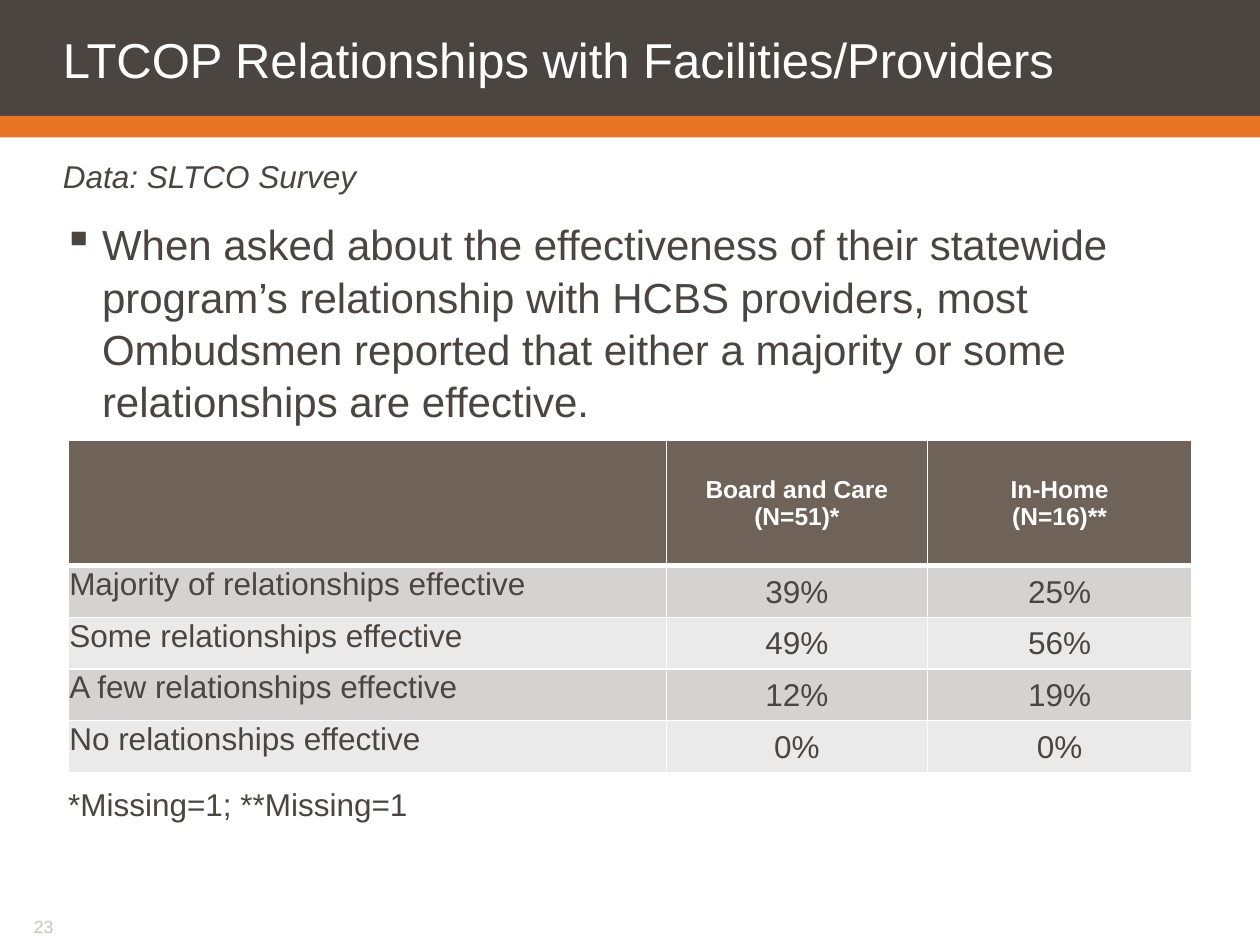
from lxml import etree
from pptx import Presentation
from pptx import util as u
from pptx.dml.color import RGBColor
from pptx.enum import shapes, text
from pptx.oxml.ns import qn

COLORS = {
    "dark": "4A4541", "orange": "E87424", "white": "FFFFFF", "number": "C8C2BF",
    "header": "6E6259", "band": "D5D3D1", "light": "EBEAEA",
}
FONT = "Arial"
HEADER = ["", "Board and Care\n(N=51)*", "In-Home\n(N=16)**"]
ROWS = [
    ["Majority of relationships effective", "39%", "25%"],
    ["Some relationships effective", "49%", "56%"],
    ["A few relationships effective", "12%", "19%"],
    ["No relationships effective", "0%", "0%"],
]
COLUMN_WIDTHS = [4.75, 2.07, 2.1]
HEADER_HEIGHT, ROW_HEIGHT = 1, 0.41


def color(name):
    return RGBColor.from_string(COLORS[name])


def style(para, size, tint, bold=False, italic=False):
    font = para.font
    font.name, font.size = FONT, u.Pt(size)
    font.bold, font.italic = bold, italic
    font.color.rgb = color(tint)


def set_margins(item, margins):
    sides = ("left", "top", "right", "bottom")
    for side, value in zip(sides, margins):
        setattr(item, f"margin_{side}", u.Inches(value))


def add_band(page, top, height, tint):
    band = page.shapes.add_shape(shapes.MSO_SHAPE.RECTANGLE, 0, u.Inches(top),
                                 u.Inches(10), u.Inches(height))
    band.shadow.inherit = False
    band.fill.solid()
    band.fill.fore_color.rgb = color(tint)
    band.line.fill.background()


def add_text(page, words, place, size, tint="dark", margins=(0, 0.05, 0, 0.05),
             italic=False, wrap=True):
    box = page.shapes.add_textbox(*map(u.Inches, place))
    frame = box.text_frame
    frame.word_wrap = wrap
    set_margins(frame, margins)
    frame.text = words
    para = frame.paragraphs[0]
    style(para, size, tint, italic=italic)
    return frame


def add_bullet(page, words, place):
    para = add_text(page, words, place, 24).paragraphs[0]
    para.line_spacing = 1.04
    props = para._p.get_or_add_pPr()
    indent = u.Inches(0.31)
    props.set("marL", str(indent))
    props.set("indent", str(-indent))
    # The bullet goes before the default run properties
    bullet = etree.Element(qn("a:buChar"), char="▪")
    props.find(qn("a:defRPr")).addprevious(bullet)


def set_borders(cell, bottom):
    props = cell._tc.get_or_add_tcPr()
    widths = {"lnL": 1, "lnR": 1, "lnT": 1, "lnB": bottom}
    for position, (tag, width) in enumerate(widths.items()):
        line = etree.Element(qn(f"a:{tag}"), w=str(u.Pt(width)))
        fill = etree.SubElement(line, qn("a:solidFill"))
        etree.SubElement(fill, qn("a:srgbClr"), val=COLORS["white"])
        props.insert(position, line)


def fill_cell(cell, words, row, column):
    is_header = row == 0
    cell.fill.solid()
    tint = "header" if is_header else "band" if row % 2 else "light"
    cell.fill.fore_color.rgb = color(tint)
    set_borders(cell, bottom=3 if is_header else 1)
    set_margins(cell, (0.01, 0.01, 0.01, 0))
    if is_header or column > 0:
        cell.vertical_anchor = text.MSO_ANCHOR.MIDDLE
    cell.text_frame.text = words
    for para in cell.text_frame.paragraphs:
        style(para, 14 if is_header else 18,
              "white" if is_header else "dark", bold=is_header)
        if column > 0:
            para.alignment = text.PP_ALIGN.CENTER


def add_results(page, left, top):
    data = [HEADER] + ROWS
    height = HEADER_HEIGHT + ROW_HEIGHT * len(ROWS)
    frame = page.shapes.add_table(len(data), len(HEADER), u.Inches(left), u.Inches(top),
                                  u.Inches(sum(COLUMN_WIDTHS)), u.Inches(height))
    table = frame.table
    for column, width in zip(table.columns, COLUMN_WIDTHS):
        column.width = u.Inches(width)
    for row, values in enumerate(data):
        table.rows[row].height = u.Inches(ROW_HEIGHT if row else HEADER_HEIGHT)
        for column, words in enumerate(values):
            fill_cell(table.cell(row, column), words, row, column)


def main():
    deck = Presentation()
    deck.slide_width, deck.slide_height = u.Inches(10), u.Inches(7.5)
    page = deck.slides.add_slide(deck.slide_layouts[6])

    # Title band and page number
    add_band(page, 0, 0.92, "dark")
    add_band(page, 0.92, 0.17, "orange")
    title = add_text(page, "LTCOP Relationships with Facilities/Providers",
                     (0, 0, 10, 0.92), 28, "white", (0.5, 0.1, 0.1, 0))
    title.vertical_anchor = text.MSO_ANCHOR.MIDDLE
    title.paragraphs[0].line_spacing = u.Pt(28)
    add_text(page, "23", (0.17, 7.27, 1.92, 0.18), 10, "number",
             (0.1, 0, 0.1, 0.05), wrap=False)

    # Data source and finding
    add_text(page, "Data: SLTCO Survey", (0, 1.22, 10, 0.33), 18,
             margins=(0.5, 0.03, 0, 0), italic=True)
    add_bullet(page, "When asked about the effectiveness of their statewide program’s "
               "relationship with HCBS providers, most Ombudsmen reported that either "
               "a majority or some relationships are effective.",
               (0.5, 1.67, 8.92, 1.75))

    # Survey results and footnote
    add_results(page, 0.54, 3.49)
    add_text(page, "*Missing=1; **Missing=1", (0.54, 6.18, 8.92, 0.47), 18)

    deck.save("out.pptx")


if __name__ == "__main__":
    main()
